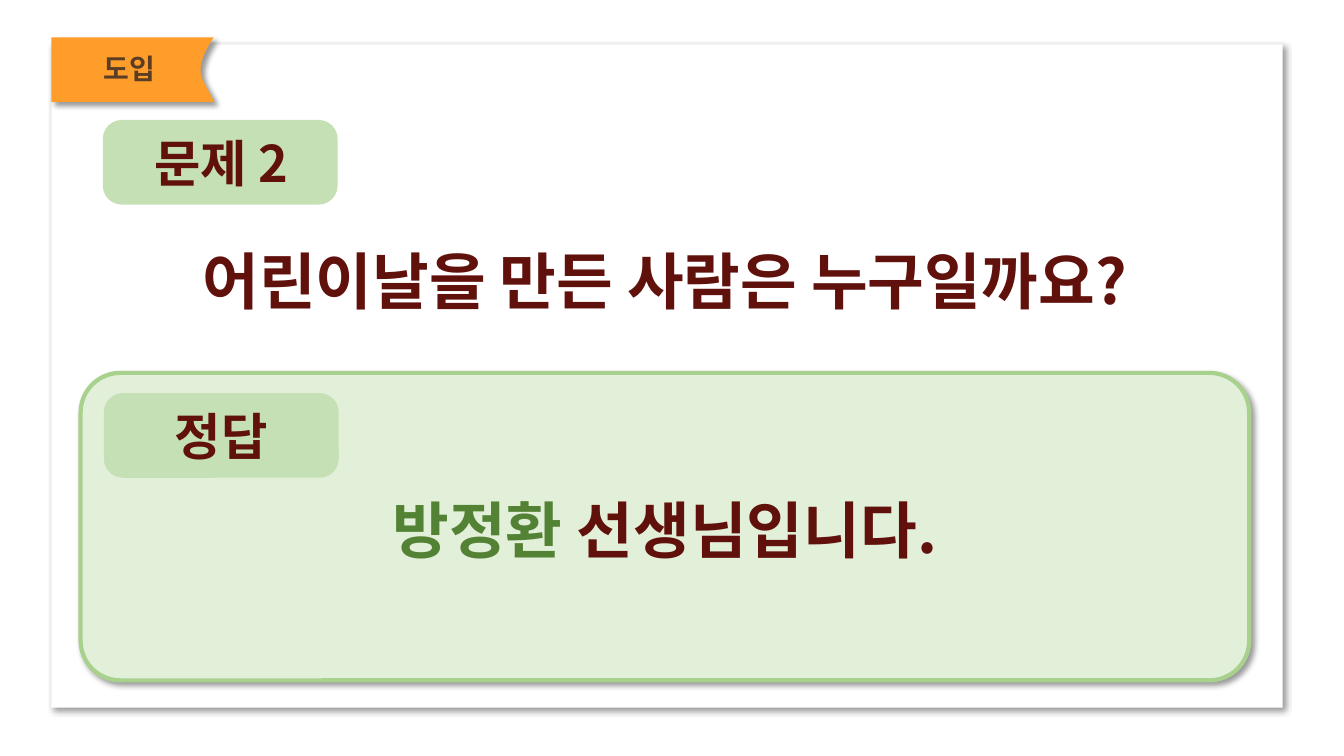
from lxml.etree import SubElement
from pptx import Presentation
from pptx.dml.color import RGBColor
from pptx.enum.shapes import MSO_SHAPE
from pptx.enum.text import MSO_AUTO_SIZE, PP_ALIGN
from pptx.oxml import parse_xml
from pptx.oxml.ns import nsdecls, qn
from pptx.util import Inches, Pt

FONT = "Noto Sans CJK KR"
HEX = {"page": "FFFFFF", "flag": "FE9D2A", "tab": "5B3D25", "badge": "C5E0B4",
       "panel": "E2F0D9", "edge": "A9D18E", "ink": "60110B", "name": "548235"}
RGB = {key: RGBColor.from_string(code) for key, code in HEX.items()}

deck = Presentation()
deck.slide_width, deck.slide_height = Inches(13.33), Inches(7.5)
slide = deck.slides.add_slide(deck.slide_layouts[6])
shapes = slide.shapes
wide, high = deck.slide_width / 100, deck.slide_height / 100


def style(shape, fill, dist=0, edge=None):
    """Fill a shape; dist is the shadow offset in points, 0 for none."""
    shape.fill.solid()
    shape.fill.fore_color.rgb = RGB[fill]
    if edge:
        shape.line.color.rgb = RGB[edge]
        shape.line.width = Pt(3)
    else:
        shape.line.fill.background()
    shape.shadow.inherit = False
    if dist:
        glow = shape._element.spPr.find(qn("a:effectLst"))
        glow.append(parse_xml(
            f'<a:outerShdw {nsdecls("a")} blurRad="{Pt(4)}" dist="{Pt(dist)}" '
            'dir="2700000" algn="tl" rotWithShape="0"><a:srgbClr val="000000">'
            '<a:alpha val="40000"/></a:srgbClr></a:outerShdw>'))


def write(box, size, *parts):
    """Centre (text, colour) parts in a box given in percent of the slide."""
    x, y, w, h = box
    frame = shapes.add_textbox(
        int(x * wide), int(y * high), int(w * wide), int(h * high)).text_frame
    frame.word_wrap = True
    frame.auto_size = MSO_AUTO_SIZE.SHAPE_TO_FIT_TEXT
    para = frame.paragraphs[0]
    para.alignment = PP_ALIGN.CENTER
    for text, ink in parts:
        run = para.add_run()
        run.text = text
        for key, value in {"name": FONT, "size": Pt(size), "bold": True}.items():
            setattr(run.font, key, value)
        run.font.color.rgb = RGB[ink]
        SubElement(run._r.get_or_add_rPr(), qn("a:ea"), typeface=FONT)


# Page and flag, in percent of the slide
page = shapes.add_shape(MSO_SHAPE.RECTANGLE, int(3.83 * wide), int(5.87 * high),
                        int(91.6 * wide), int(87.73 * high))
style(page, "page", 3)

left, top, right, base = 3.83, 4.93, 15.9, 13.47
curve = [(right, top), (14.03, 10), (15.3, 10.53), (right, base)]
steps = 24
notch = []
for step in range(steps + 1):
    t = step / steps
    mix = [(1 - t) ** 3, 3 * t * (1 - t) ** 2, 3 * t * t * (1 - t), t ** 3]
    notch.append((sum(m * x for m, (x, y) in zip(mix, curve)) * wide,
                  sum(m * y for m, (x, y) in zip(mix, curve)) * high))
pen = shapes.build_freeform(int(left * wide), int(top * high))
pen.add_line_segments(notch + [(left * wide, base * high)], close=True)
style(pen.convert_to_shape(), "flag", 4)
write((4.13, 6.13, 11.03, 5.87), 20, ("도입", "tab"))

# Rounded blocks: box, corner, fill, shadow, edge, label
badge = (17.48, 11.2)
blocks = [
    ((7.65, 15.87, *badge), 0.225, "badge", 0, None, "문제 2"),
    ((6, 49.33, 86.95, 40.67), 0.129, "panel", 3, "edge", None),
    ((7.73, 52, *badge), 0.225, "badge", 0, None, "정답"),
]
for (x, y, w, h), bend, fill, dist, edge, label in blocks:
    block = shapes.add_shape(MSO_SHAPE.ROUNDED_RECTANGLE, int(x * wide),
                             int(y * high), int(w * wide), int(h * high))
    block.adjustments[0] = bend
    style(block, fill, dist, edge)
    if label:
        write((7.73, y + 0.93, w, 9.47), 36, (label, "ink"))

write((1.65, 31.47, 95.65, 11.2), 44, ("어린이날을 만든 사람은 누구일까요?", "ink"))
write((6, 64.4, 86.95, 11.2), 44, ("방정환 ", "name"), ("선생님입니다.", "ink"))

deck.save("out.pptx")
